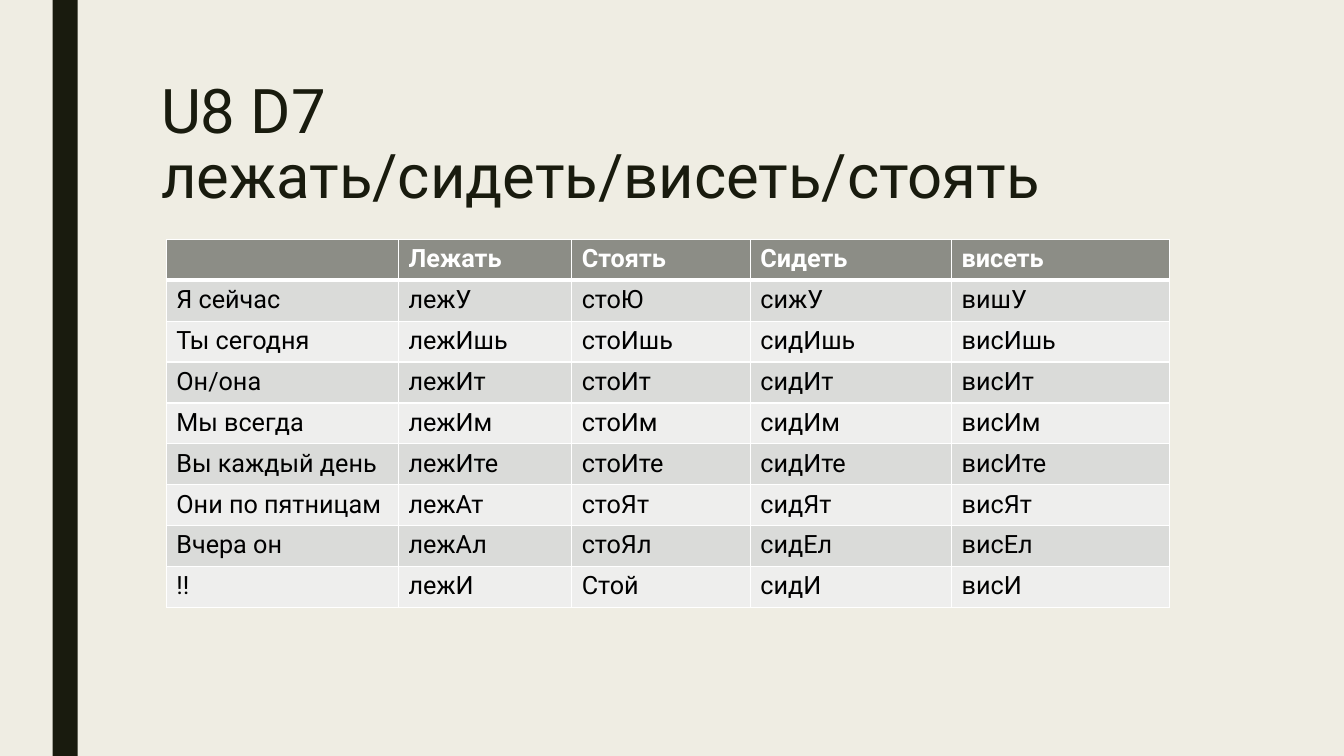
from lxml import etree
from pptx import Presentation
from pptx.dml.color import RGBColor
from pptx.enum.shapes import MSO_SHAPE as Shape
from pptx.enum.text import MSO_ANCHOR as Anchor
from pptx.oxml import parse_xml
from pptx.oxml.ns import nsdecls
from pptx.util import Pt


def paint(fill, color):
    fill.solid()
    fill.fore_color.rgb = RGBColor.from_string(color)


def style_font(paragraph, size, color, bold=False):
    paragraph.font.name = "Roboto"
    paragraph.font.size = Pt(size)
    paragraph.font.bold = bold
    paragraph.font.color.rgb = RGBColor.from_string(color)


presentation = Presentation()
presentation.slide_width = Pt(960)
presentation.slide_height = Pt(540)
slide = presentation.slides.add_slide(presentation.slide_layouts[6])
paint(slide.background.fill, "EFEDE3")

stripe = slide.shapes.add_shape(Shape.RECTANGLE, Pt(37.5), Pt(0), Pt(18), Pt(540))
stripe.shadow.inherit = False
paint(stripe.fill, "191B0E")
stripe.line.fill.background()

title = slide.shapes.add_textbox(Pt(108), Pt(54), Pt(756), Pt(116.6))
title.text_frame.word_wrap = True
title.text_frame.vertical_anchor = Anchor.TOP
paragraph = title.text_frame.paragraphs[0]
paragraph.text = "U8 D7\vлежать/сидеть/висеть/стоять"
paragraph.line_spacing = 0.89
style_font(paragraph, 44, "191B0E")

conjugation = [
    ["", "Лежать", "Стоять", "Сидеть", "висеть"],
    ["Я сейчас", "лежУ", "стоЮ", "сижУ", "вишУ"],
    ["Ты сегодня", "лежИшь", "стоИшь", "сидИшь", "висИшь"],
    ["Он/она", "лежИт", "стоИт", "сидИт", "висИт"],
    ["Мы всегда", "лежИм", "стоИм", "сидИм", "висИм"],
    ["Вы каждый день", "лежИте", "стоИте", "сидИте", "висИте"],
    ["Они по пятницам", "лежАт", "стоЯт", "сидЯт", "висЯт"],
    ["Вчера он", "лежАл", "стоЯл", "сидЕл", "висЕл"],
    ["!!", "лежИ", "Стой", "сидИ", "висИ"],
]
column_widths = [165.8, 123.8, 127.6, 143.8, 155.8]
row_height = 29.2

table = slide.shapes.add_table(
    len(conjugation), len(column_widths), Pt(118.8), Pt(171),
    Pt(sum(column_widths)), Pt(row_height * len(conjugation)),
).table
for column, width in zip(table.columns, column_widths):
    column.width = Pt(width)

for row_index, words in enumerate(conjugation):
    table.rows[row_index].height = Pt(row_height)
    is_header = row_index == 0
    band = "8C8D86" if is_header else ("EEEEED", "DADBD9")[row_index % 2]
    for column_index, word in enumerate(words):
        cell = table.cell(row_index, column_index)
        cell.text = word
        style_font(cell.text_frame.paragraphs[0], 18,
                   "FFFFFF" if is_header else "000000", is_header)
        properties = cell._tc.get_or_add_tcPr()
        for side in "LRTB":
            heavy = (row_index, side) in ((0, "B"), (1, "T"))
            border = parse_xml(f'<a:ln{side} {nsdecls("a")} w="{Pt(3 if heavy else 1)}"/>')
            line_fill = etree.SubElement(border, "{%s}solidFill" % border.nsmap["a"])
            etree.SubElement(line_fill, "{%s}srgbClr" % border.nsmap["a"], val="FFFFFF")
            properties.append(border)
        paint(cell.fill, band)

presentation.save("out.pptx")
